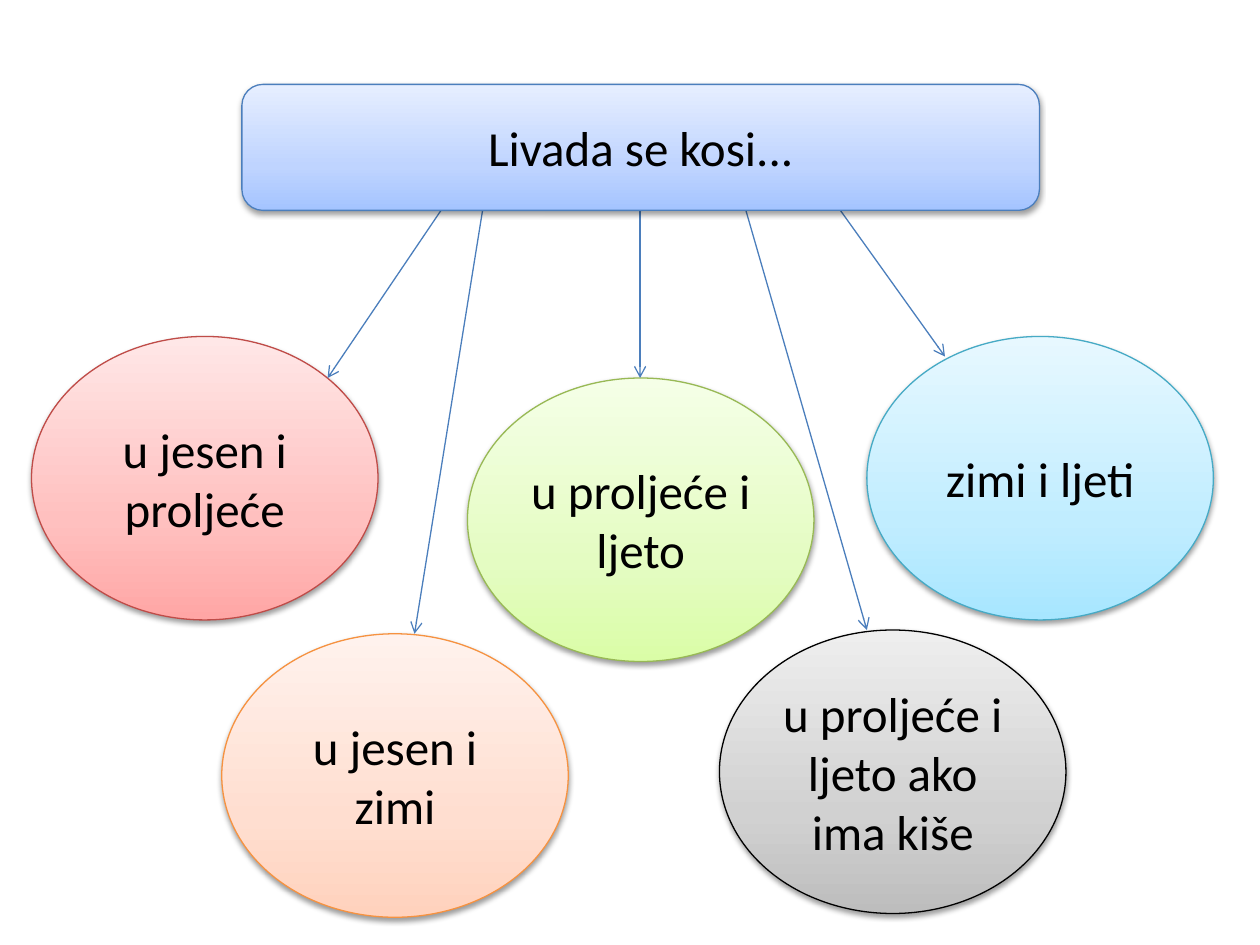
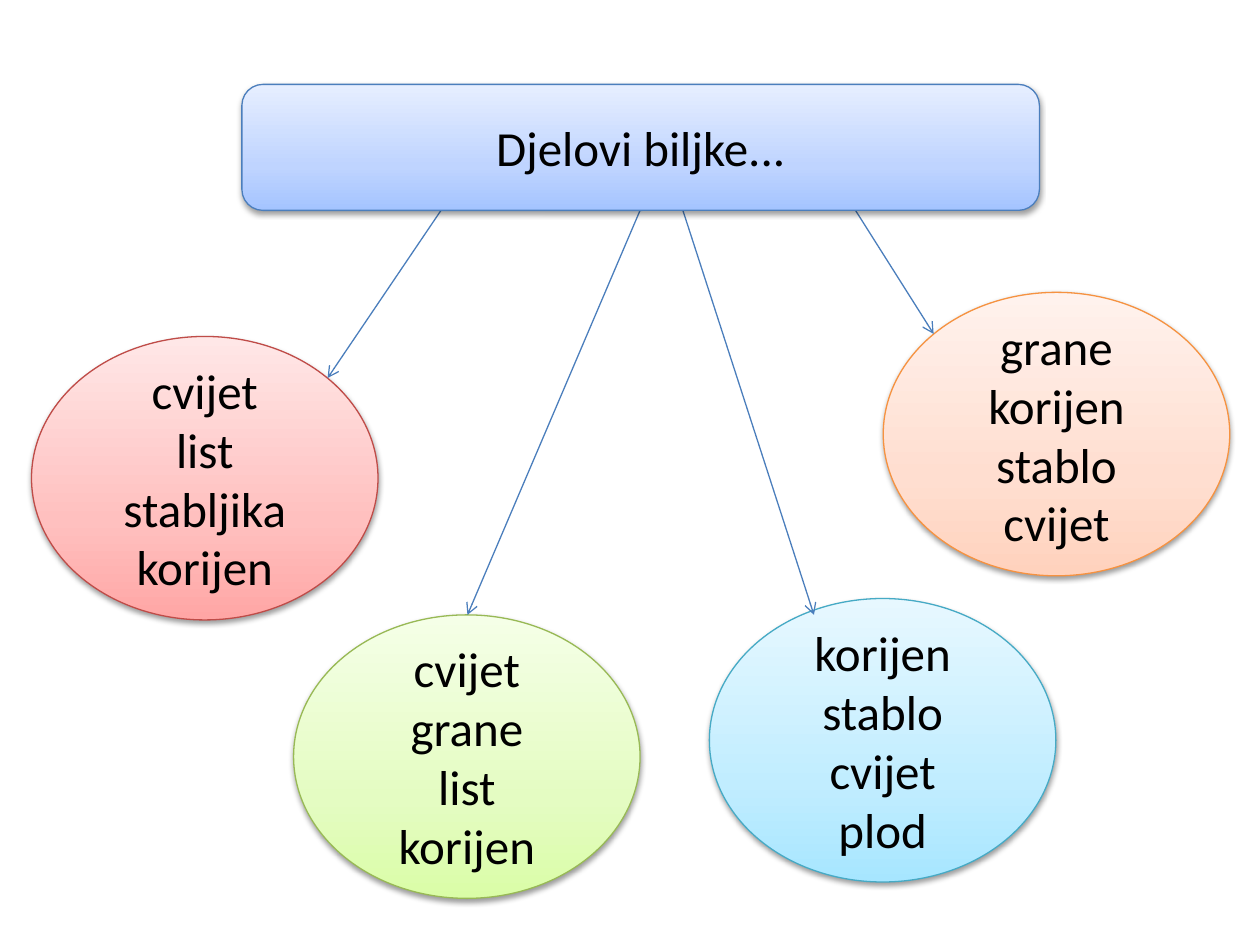
"""Two quiz slides: a title bar with arrows leading to answer bubbles."""
import copy

import pptx
import pptx.dml.color
import pptx.enum.shapes
import pptx.enum.text
import pptx.oxml
import pptx.oxml.ns
import pptx.util

Inches = pptx.util.Inches
Pt = pptx.util.Pt
RGB = pptx.dml.color.RGBColor.from_string
SHAPE = pptx.enum.shapes.MSO_SHAPE
qn = pptx.oxml.ns.qn

# Each answer: lines, colour, bubble corner, arrow start x, arrow tip
SLIDES = [
    ("Livada se kosi...", [
        (["u proljeće i ljeto ako ima kiše"], "gray", (5.71, 5), 5.92, (6.88, 5)),
        (["u jesen i zimi"], "orange", (1.76, 5.03), 3.83, (3.29, 5.03)),
        (["u jesen i proljeće"], "red", (0.25, 2.67), 3.5, (2.6, 3)),
        (["u proljeće i ljeto"], "green", (3.71, 3), 5.08, (5.08, 3)),
        (["zimi i ljeti"], "cyan", (6.88, 2.67), 6.67, (7.5, 2.83)),
    ]),
    ("Djelovi biljke...", [
        (["cvijet", "list", "stabljika", "korijen"], "red", (0.25, 2.67), 3.5, (2.6, 3)),
        (["cvijet", "grane", "list", "korijen"], "green", (2.33, 4.88), 5.08, (3.71, 4.88)),
        (["grane", "korijen", "stablo", "cvijet"], "orange", (7.01, 2.32), 6.79, (7.41, 2.65)),
        (["korijen", "stablo", "cvijet", "plod"], "cyan", (5.63, 4.75), 5.42, (6.46, 4.88)),
    ]),
]

# Outline, then gradient from bottom to top
COLORS = {
    "blue": ("4B7EBC", "A4C4FF", "BFD4FF", "E6EEFF"),
    "red": ("BF4C48", "FFA6A5", "FFC0BF", "FFE7E7"),
    "green": ("98B955", "DAFDA7", "E4FCC2", "F5FFE7"),
    "cyan": ("46AAC5", "A7E6FF", "C1EDFF", "E7F8FF"),
    "orange": ("F69240", "FFD2BD", "FFDED0", "FFF2ED"),
    "gray": ("000000", "BDBDBD", "D1D1D1", "EEEEEE"),
}
TEXT = "000000"
FONT, FONT_SIZE = "Calibri", 28
STOPS = (0, 0.35, 1)
LINE_WIDTH = 0.75
TITLE_BOX = (1.92, 0.67, 6.33, 1)
TITLE_BOTTOM = TITLE_BOX[1] + TITLE_BOX[3]
BUBBLE_SIZE = (2.75, 2.25)
SHADOW = (
    '<a:outerShdw xmlns:a="http://schemas.openxmlformats.org/drawingml/2006/main"'
    ' blurRad="40000" dist="20000" dir="5400000" rotWithShape="0">'
    f'<a:srgbClr val="{TEXT}"><a:alpha val="38000"/></a:srgbClr></a:outerShdw>'
)


def fill_gradient(sp, colors):
    sp.fill.gradient()
    sp.fill.gradient_angle = 90
    stop_list = sp._element.spPr.find(".//" + qn("a:gsLst"))
    stop_list.append(copy.deepcopy(stop_list[-1]))
    for stop, position, color in zip(sp.fill.gradient_stops, STOPS, colors):
        stop.position = position
        stop.color.rgb = RGB(color)


def add_label(slide, preset, box, lines, color):
    sp = slide.shapes.add_shape(preset, *map(Inches, box))
    outline, *gradient = COLORS[color]
    fill_gradient(sp, gradient)
    sp.line.color.rgb = RGB(outline)
    sp.line.width = Pt(LINE_WIDTH)
    sp.shadow.inherit = False
    sp._element.spPr.find(qn("a:effectLst")).append(pptx.oxml.parse_xml(SHADOW))
    tf = sp.text_frame
    tf.word_wrap = True
    tf.vertical_anchor = pptx.enum.text.MSO_ANCHOR.MIDDLE
    tf.text = "\n".join(lines)
    for p in tf.paragraphs:
        p.alignment = pptx.enum.text.PP_ALIGN.CENTER
        for r in p.runs:
            r.font.name = FONT
            r.font.size = Pt(FONT_SIZE)
            r.font.color.rgb = RGB(TEXT)


def add_arrow(slide, start_x, tip):
    ends = map(Inches, (start_x, TITLE_BOTTOM, *tip))
    arrow = slide.shapes.add_connector(pptx.enum.shapes.MSO_CONNECTOR.STRAIGHT, *ends)
    arrow.line.color.rgb = RGB(COLORS["blue"][0])
    arrow.line.width = Pt(LINE_WIDTH)
    pptx.oxml.ns
    spPr = arrow._element.spPr
    head = spPr.find(qn("a:ln")).makeelement(qn("a:tailEnd"), {"type": "arrow"})
    spPr.find(qn("a:ln")).append(head)
    spPr.append(spPr.makeelement(qn("a:effectLst"), {}))


def main():
    prs = pptx.Presentation()
    prs.slide_width, prs.slide_height = Inches(10), Inches(7.5)
    for title, answers in SLIDES:
        slide = prs.slides.add_slide(prs.slide_layouts[6])
        for lines, color, corner, _, _ in answers:
            add_label(slide, SHAPE.OVAL, corner + BUBBLE_SIZE, lines, color)
        for _, _, _, start_x, tip in answers:
            add_arrow(slide, start_x, tip)
        add_label(slide, SHAPE.ROUNDED_RECTANGLE, TITLE_BOX, [title], "blue")
    prs.save("out.pptx")


if __name__ == "__main__":
    main()
